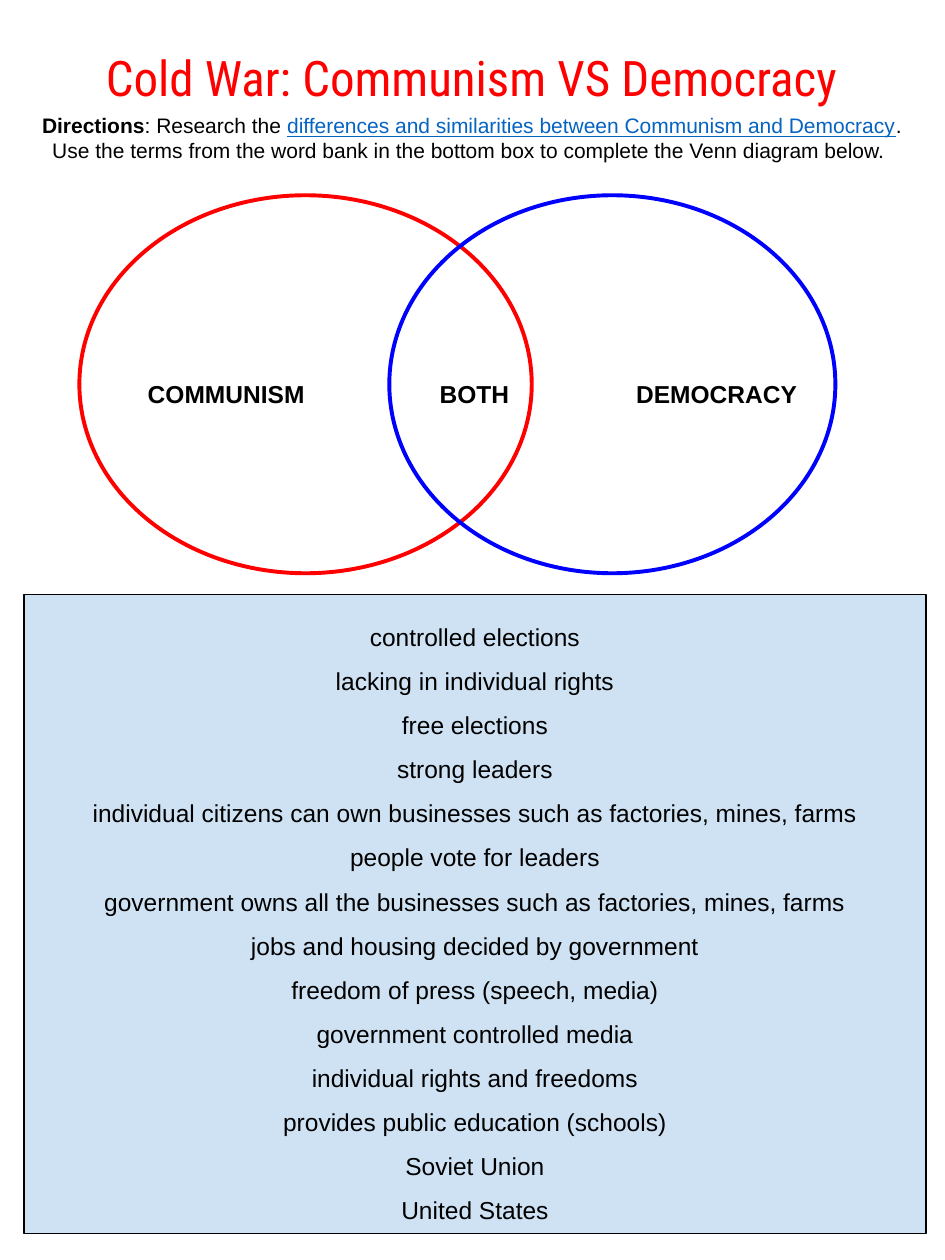
from pptx import Presentation
from pptx.dml.color import RGBColor
from pptx.enum.shapes import MSO_SHAPE
from pptx.enum.text import MSO_ANCHOR, PP_ALIGN
from pptx.util import Inches, Pt

RED = RGBColor(0xFF, 0x00, 0x00)
BLUE = RGBColor(0x00, 0x00, 0xFF)
BLACK = RGBColor(0x00, 0x00, 0x00)
LINK_BLUE = RGBColor(0x05, 0x63, 0xC1)
PALE_BLUE = RGBColor(0xCF, 0xE2, 0xF3)

WORD_BANK = [
    "controlled elections",
    "lacking in individual rights",
    "free elections",
    "strong leaders",
    "individual citizens can own businesses such as factories, mines, farms",
    "people vote for leaders",
    "government owns all the businesses such as factories, mines, farms",
    "jobs and housing decided by government",
    "freedom of press (speech, media)",
    "government controlled media",
    "individual rights and freedoms",
    "provides public education (schools)",
    "Soviet Union",
    "United States",
]


def add_run(paragraph, text, size, color=BLACK, bold=False, underline=False, font="Arial"):
    run = paragraph.add_run()
    run.text = text
    run.font.name = font
    run.font.size = Pt(size)
    run.font.bold = bold
    run.font.underline = underline
    run.font.color.rgb = color


def set_up_frame(shape, anchor=MSO_ANCHOR.TOP, vertical_inset=0.1):
    frame = shape.text_frame
    frame.word_wrap = True
    frame.vertical_anchor = anchor
    frame.margin_left = frame.margin_right = Inches(0.1)
    frame.margin_top = frame.margin_bottom = Inches(vertical_inset)
    return frame


def add_text_area(slide, left, top, width, height, align=PP_ALIGN.CENTER, **frame_options):
    """Add a text box and return its first paragraph."""
    area = slide.shapes.add_textbox(Inches(left), Inches(top), Inches(width), Inches(height))
    paragraph = set_up_frame(area, **frame_options).paragraphs[0]
    paragraph.alignment = align
    return paragraph


def add_outlined(slide, preset, left, top, width, height, color, weight, fill=None):
    shape = slide.shapes.add_shape(
        preset, Inches(left), Inches(top), Inches(width), Inches(height))
    shape.shadow.inherit = False
    shape.line.color.rgb = color
    shape.line.width = Pt(weight)
    if fill is None:
        shape.fill.background()
    else:
        shape.fill.solid()
        shape.fill.fore_color.rgb = fill
    return shape


def add_title(slide, left, top, width, height):
    title = add_text_area(slide, left, top, width, height, vertical_inset=0.05)
    add_run(title, "Cold War: Communism VS Democracy", 28, RED, font="Roboto Condensed")


def add_directions(slide, left, top, width, height):
    directions = add_text_area(slide, left, top, width, height, anchor=MSO_ANCHOR.MIDDLE)
    add_run(directions, "Directions", 12, bold=True)
    add_run(directions, ": Research the ", 12)
    add_run(directions, "differences and similarities between Communism and Democracy",
            12, LINK_BLUE, underline=True)
    add_run(directions, ". Use the terms from the word bank in the bottom box "
            "to complete the Venn diagram below. ", 12)


def add_venn_diagram(slide, left, top, width, height):
    communism_width, democracy_width = 3.59, 3.54
    democracy_left = left + width - democracy_width
    add_outlined(slide, MSO_SHAPE.OVAL, left, top, communism_width, height, RED, 2.25)
    add_outlined(slide, MSO_SHAPE.OVAL, democracy_left, top, democracy_width, height, BLUE, 2.25)

    for label, offset, label_width, align in [
        ("COMMUNISM", 0.44, 1.45, PP_ALIGN.CENTER),
        ("BOTH", 2.72, 0.83, PP_ALIGN.CENTER),
        ("DEMOCRACY", 4.32, 1.55, PP_ALIGN.LEFT),
    ]:
        heading = add_text_area(slide, left + offset, top + 1.36, label_width, 0.45, align)
        add_run(heading, label, 14, bold=True)


def add_word_bank(slide, left, top, width, height):
    bank = add_outlined(slide, MSO_SHAPE.RECTANGLE, left, top, width, height,
                        BLACK, 0.75, PALE_BLUE)
    frame = set_up_frame(bank)
    for index, term in enumerate(WORD_BANK):
        entry = frame.add_paragraph() if index else frame.paragraphs[0]
        entry.alignment = PP_ALIGN.CENTER
        entry.line_spacing = 1.5
        add_run(entry, term, 14)


def main():
    presentation = Presentation()
    presentation.slide_width = Inches(7.5)
    presentation.slide_height = Inches(10)
    slide = presentation.slides.add_slide(presentation.slide_layouts[6])
    add_title(slide, 0.39, 0.33, 6.7, 0.57)
    add_directions(slide, 0.14, 0.62, 7.21, 0.95)
    add_venn_diagram(slide, 0.63, 1.55, 6, 3)
    add_word_bank(slide, 0.19, 4.72, 7.16, 5.07)
    presentation.save("out.pptx")


if __name__ == "__main__":
    main()
